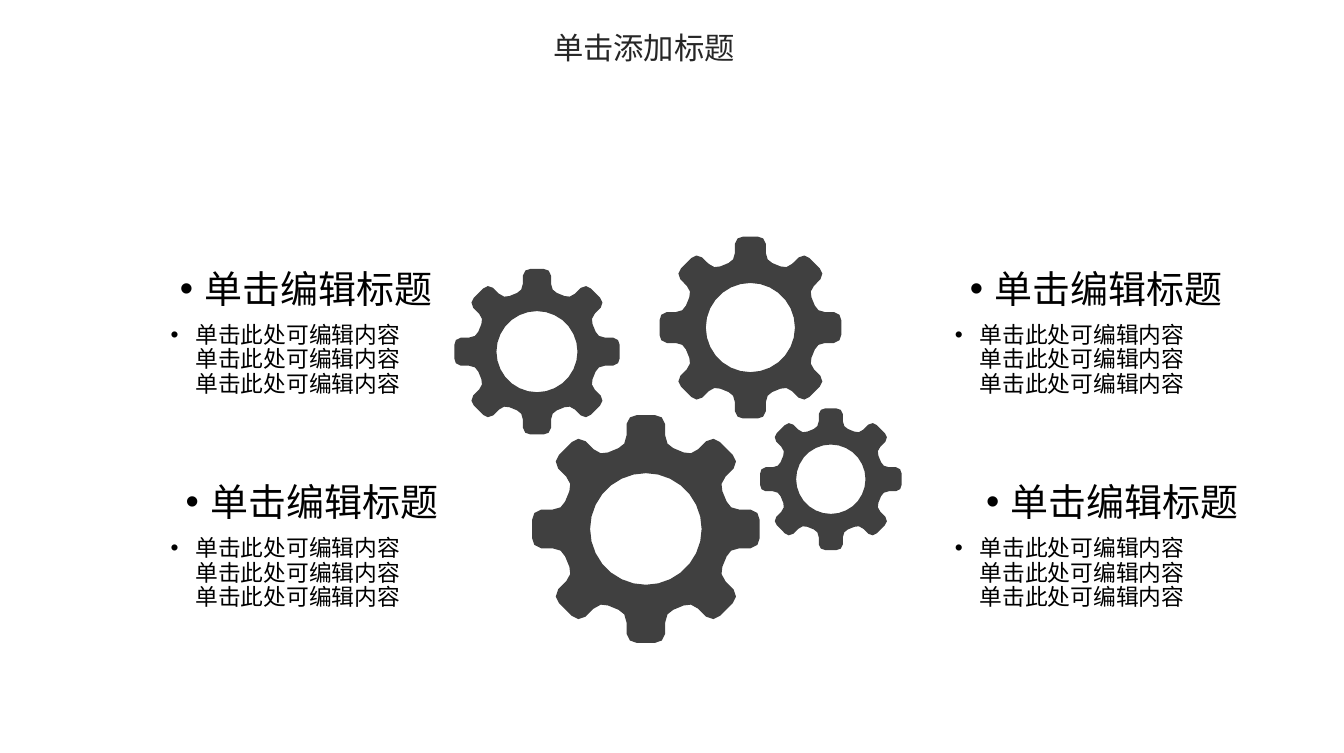
import math

from lxml import etree
from pptx import Presentation
from pptx.dml.color import RGBColor
from pptx.enum import text
from pptx.oxml import ns
from pptx.util import Pt

HEADING = "单击编辑标题"
BODY = "单击此处可编辑内容" * 3

# Centre x, centre y and outer radius
GEARS = [
    (438, 252.5, 37.3),
    (395.6, 172.6, 47.9),
    (340.5, 278.7, 60),
    (283.1, 185.3, 43.6),
]
# Left, top and heading width
ENTRIES = [
    (82, 139, 159),
    (495.4, 139, 165),
    (82, 251.3, 165),
    (495.4, 251.3, 182),
]
TEETH = 8
HOLE_RATIO = 0.49
# Right side of one upright tooth, on a gear of radius 1
TOOTH_SIDE = [(0.08, 1), (0.14, 0.98), (0.17, 0.92),
              (0.17, 0.82), (0.19, 0.75), (0.24, 0.71)]


def rgb(value):
    return RGBColor.from_string(value)


def gear_outline():
    """Return the rim of a gear of radius 1, tooth by tooth."""
    tooth = [(-x, y) for x, y in reversed(TOOTH_SIDE)] + TOOTH_SIDE
    outline = []
    for index in range(TEETH):
        angle = 2 * math.pi * index / TEETH
        cos, sin = math.cos(angle), math.sin(angle)
        outline += [(x * cos + y * sin, x * sin - y * cos) for x, y in tooth]
    return outline


def circle(radius, steps=28):
    angles = [2 * math.pi * step / steps for step in range(steps)]
    return [(radius * math.cos(a), radius * math.sin(a)) for a in angles]


class SlideWriter:
    font = "Noto Sans CJK SC"
    heading_font = "Calibri"
    ink = "000000"
    title_ink = "262626"
    gear_fill = "404040"

    def __init__(self, page):
        self.page = page

    def format_runs(self, para, size, font, color):
        for span in para.runs:
            span.font.size = Pt(size)
            span.font.name = font
            span.font.color.rgb = rgb(color)

    def title(self, words, left, top, width, height):
        box = self.page.shapes.title
        box.left, box.top = Pt(left), Pt(top)
        box.width, box.height = Pt(width), Pt(height)
        frame = box.text_frame
        frame.text = words
        frame.word_wrap = True
        frame.auto_size = text.MSO_AUTO_SIZE.SHAPE_TO_FIT_TEXT
        para = frame.paragraphs[0]
        para.alignment = text.PP_ALIGN.LEFT
        para.line_spacing = 1.0
        para.space_before = Pt(0)
        self.format_runs(para, 16, self.font, self.title_ink)

    def bullet(self, words, left, top, width, height, size, font):
        box = self.page.shapes.add_textbox(
            Pt(left), Pt(top), Pt(width), Pt(height))
        frame = box.text_frame
        frame.word_wrap = True
        frame.text = words
        para = frame.paragraphs[0]
        para.alignment = text.PP_ALIGN.CENTER
        para.line_spacing = 0.9
        para.space_before = Pt(7.3)
        props = para._p.get_or_add_pPr()
        props.set("marL", str(Pt(13)))
        props.set("indent", str(-Pt(13)))
        etree.SubElement(props, ns.qn("a:buFont")).set("typeface", "Arial")
        etree.SubElement(props, ns.qn("a:buChar")).set("char", "•")
        self.format_runs(para, size, font, self.ink)

    def entry(self, left, top, heading_width):
        """Add a heading with its body text below."""
        self.bullet(HEADING, left, top, heading_width, 27.4, 20,
                    self.heading_font)
        self.bullet(BODY, left, top + 28, 137, 41, 12, self.font)

    def gear(self, center_x, center_y, radius):
        rim, hole = [
            [(Pt(center_x + radius * x), Pt(center_y + radius * y))
             for x, y in contour]
            for contour in (gear_outline(), circle(HOLE_RATIO))]
        builder = self.page.shapes.build_freeform(*rim[0])
        builder.add_line_segments(rim[1:], close=True)
        builder.move_to(*hole[0])
        builder.add_line_segments(hole[1:], close=True)
        shape = builder.convert_to_shape()
        shape.shadow.inherit = False
        shape.fill.solid()
        shape.fill.fore_color.rgb = rgb(self.gear_fill)
        shape.line.fill.background()


def main():
    deck = Presentation()
    deck.slide_width, deck.slide_height = Pt(708.5), Pt(396.7)
    title_only = deck.slide_layouts[5]
    writer = SlideWriter(deck.slides.add_slide(title_only))
    for gear in GEARS:
        writer.gear(*gear)
    for entry in ENTRIES:
        writer.entry(*entry)
    writer.title("单击添加标题", 284.4, 11.5, 234, 26.6)
    deck.save("out.pptx")


if __name__ == "__main__":
    main()
